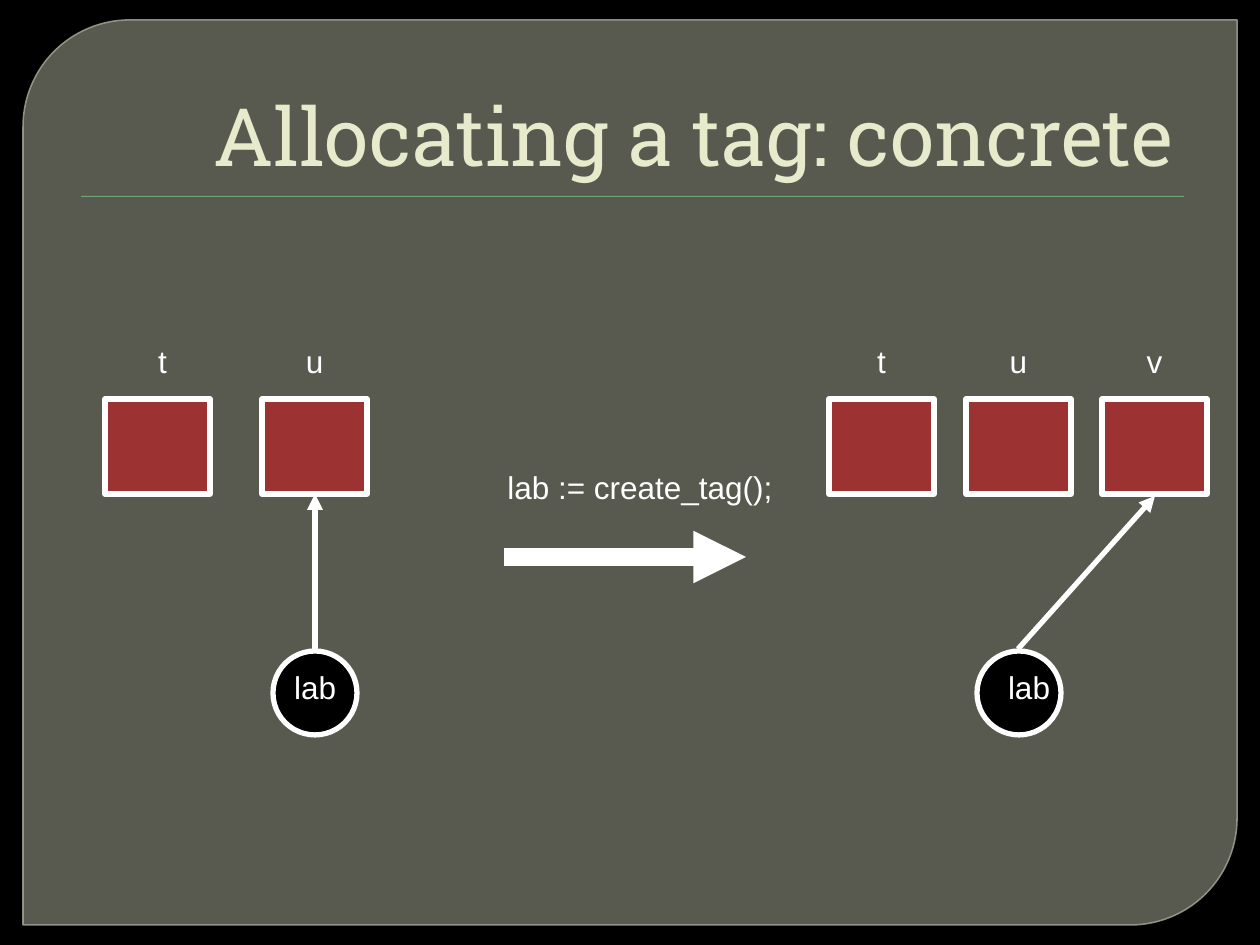
"""Build the slide that shows how allocating a tag changes the concrete state."""
from lxml.etree import SubElement
from pptx import Presentation
from pptx.dml.color import RGBColor
from pptx.enum.shapes import MSO_CONNECTOR, MSO_SHAPE
from pptx.enum.text import MSO_ANCHOR, PP_ALIGN
from pptx.oxml.ns import qn
from pptx.util import Emu, Pt

SCALE = 914400 / 126
COLORS = {
    "background": "000000",
    "panel": "888B7B",
    "panel_edge": "9DA090",
    "rule": "72A376",
    "title": "E7EACB",
    "tag": "9D3232",
    "label": "000000",
    "ink": "FFFFFF",
}


def add_figure(kind, box, fill, edge=None, edge_width=3):
    figure = slide.shapes.add_shape(kind, *[Emu(round(v * SCALE)) for v in box])
    figure.shadow.inherit = False
    figure.fill.solid()
    figure.fill.fore_color.rgb = RGBColor.from_string(COLORS[fill])
    if edge:
        figure.line.color.rgb = RGBColor.from_string(COLORS[edge])
        figure.line.width = Pt(edge_width)
    else:
        figure.line.fill.background()
    return figure


def add_caption(words, box, size=18, font="Arial", color="ink",
                align=PP_ALIGN.CENTER, anchor=MSO_ANCHOR.TOP):
    caption = slide.shapes.add_textbox(*[Emu(round(v * SCALE)) for v in box])
    frame = caption.text_frame
    frame.word_wrap = True
    frame.vertical_anchor = anchor
    frame.text = words
    paragraph = frame.paragraphs[0]
    paragraph.alignment = align
    run = paragraph.runs[0]
    run.font.size = Pt(size)
    run.font.name = font
    run.font.color.rgb = RGBColor.from_string(COLORS[color])


presentation = Presentation()
presentation.slide_width = Emu(round(1260 * SCALE))
presentation.slide_height = Emu(round(945 * SCALE))
slide = presentation.slides.add_slide(presentation.slide_layouts[6])
slide.background.fill.solid()
slide.background.fill.fore_color.rgb = RGBColor.from_string(COLORS["background"])

panel = add_figure(MSO_SHAPE.ROUND_2_DIAG_RECTANGLE, (23, 20, 1214, 905),
                   "panel", "panel_edge", 0.87)
panel.adjustments[0] = 0.118
panel.adjustments[1] = 0
panel_fill, edge_fill = panel.element.spPr.iter(qn("a:srgbClr"))
SubElement(panel_fill, qn("a:alpha"), val="65000")
SubElement(edge_fill, qn("a:alpha"), val="88000")

add_figure(MSO_SHAPE.RECTANGLE, (81, 196, 1103, 1), "rule")
add_caption("Allocating a tag: concrete", (73, 32, 1113, 157), 46, "Roboto Slab",
            "title", PP_ALIGN.RIGHT, MSO_ANCHOR.BOTTOM)

for tag, left, caption_shift in [("t", 105, 5), ("u", 262, 0), ("t", 829, 0),
                                 ("u", 966, 0), ("v", 1102, 0)]:
    add_figure(MSO_SHAPE.RECTANGLE, (left, 399, 105, 95), "tag", "ink")
    add_caption(tag, (left + caption_shift, 336, 105, 50))

for left, caption_left in [(273, 231), (977, 945)]:
    add_figure(MSO_SHAPE.OVAL, (left, 651, 84, 84), "label", "ink")
    add_caption("lab", (caption_left, 662, 168, 50))

add_caption("lab := create_tag();", (472, 462, 336, 50))

for ends, width in [((315, 651, 315, 494), 3), ((504, 557, 746, 557), 10),
                    ((1018, 649, 1155, 496), 3)]:
    arrow = slide.shapes.add_connector(MSO_CONNECTOR.STRAIGHT,
                                       *[Emu(round(v * SCALE)) for v in ends])
    arrow.line.color.rgb = RGBColor.from_string(COLORS["ink"])
    arrow.line.width = Pt(width)
    SubElement(arrow.line._get_or_add_ln(), qn("a:tailEnd"), type="triangle")
    SubElement(arrow.element.spPr, qn("a:effectLst"))

presentation.save("out.pptx")
